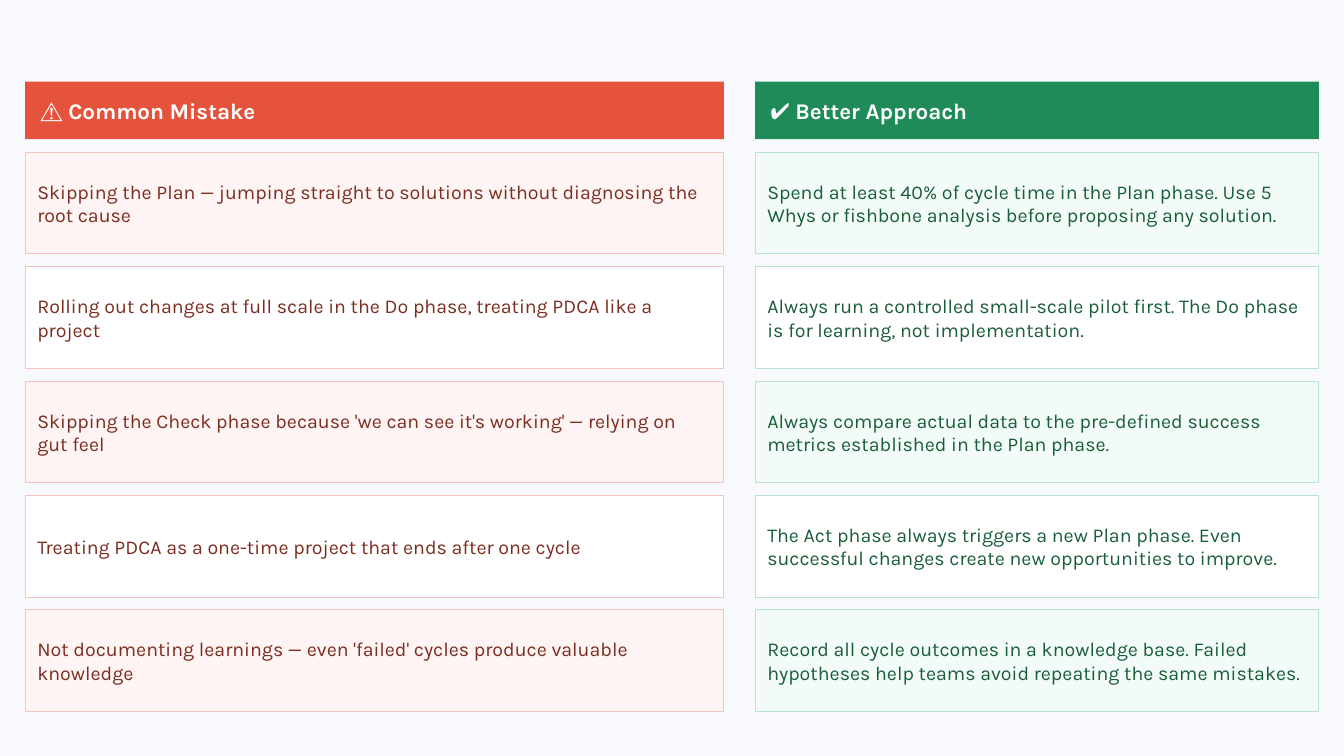
from dataclasses import dataclass

from pptx import Presentation
from pptx.dml.color import RGBColor
from pptx.enum.shapes import MSO_SHAPE
from pptx.enum.text import MSO_ANCHOR, PP_ALIGN
from pptx.util import Inches, Pt

RECTANGLE = MSO_SHAPE.RECTANGLE
MIDDLE = MSO_ANCHOR.MIDDLE
LEFT = PP_ALIGN.LEFT

BACKGROUND = RGBColor(0xF7, 0xF9, 0xFC)
WHITE = RGBColor(0xFF, 0xFF, 0xFF)
RED = RGBColor(0xE5, 0x53, 0x3D)
RED_TINT = RGBColor(0xFD, 0xF4, 0xF3)
RED_BORDER = RGBColor(0xF5, 0xC4, 0xBD)
RED_TEXT = RGBColor(0x7B, 0x2D, 0x20)
GREEN = RGBColor(0x1E, 0x8B, 0x58)
GREEN_TINT = RGBColor(0xF2, 0xFB, 0xF7)
GREEN_BORDER = RGBColor(0xB5, 0xE5, 0xCC)
GREEN_TEXT = RGBColor(0x1A, 0x5E, 0x38)

HEADER_TOP, HEADER_HEIGHT = 0.81, 0.57
FIRST_CARD_TOP, LAST_CARD_TOP, CARD_HEIGHT = 1.51, 6.05, 1.01


@dataclass
class Column:
    left: float
    width: float
    heading: str
    accent: RGBColor
    tint: RGBColor
    border: RGBColor
    text_color: RGBColor
    entries: list


MISTAKES = Column(0.25, 6.93, "⚠ Common Mistake", RED, RED_TINT, RED_BORDER, RED_TEXT, [
    "Skipping the Plan — jumping straight to solutions without diagnosing the root cause",
    "Rolling out changes at full scale in the Do phase, treating PDCA like a project",
    "Skipping the Check phase because 'we can see it's working' — relying on gut feel",
    "Treating PDCA as a one-time project that ends after one cycle",
    "Not documenting learnings — even 'failed' cycles produce valuable knowledge",
])
APPROACHES = Column(7.49, 5.59, "✔ Better Approach", GREEN, GREEN_TINT, GREEN_BORDER, GREEN_TEXT, [
    "Spend at least 40% of cycle time in the Plan phase. "
    "Use 5 Whys or fishbone analysis before proposing any solution.",
    "Always run a controlled small-scale pilot first. "
    "The Do phase is for learning, not implementation.",
    "Always compare actual data to the pre-defined success metrics "
    "established in the Plan phase.",
    "The Act phase always triggers a new Plan phase. "
    "Even successful changes create new opportunities to improve.",
    "Record all cycle outcomes in a knowledge base. "
    "Failed hypotheses help teams avoid repeating the same mistakes.",
])


class ComparisonPage:
    font_name = "Karla"
    heading_size = Pt(16)
    body_size = Pt(14)
    border_width = Pt(0.72)

    def __init__(self, deck):
        blank_layout = deck.slide_layouts[6]
        self.page = deck.slides.add_slide(blank_layout)
        self.page.background.fill.solid()
        self.page.background.fill.fore_color.rgb = BACKGROUND

    def add_box(self, left, top, width, height, fill, border=None):
        box = self.page.shapes.add_shape(
            RECTANGLE, Inches(left), Inches(top), Inches(width), Inches(height))
        box.shadow.inherit = False
        box.fill.solid()
        box.fill.fore_color.rgb = fill
        if border is None:
            box.line.fill.background()
        else:
            box.line.color.rgb = border
            box.line.width = self.border_width
        return box

    def add_text(self, box, text, size, color, side_inset, end_inset, bold=False):
        """Put one left-aligned, vertically centred paragraph in the box."""
        frame = box.text_frame
        frame.word_wrap = True
        frame.vertical_anchor = MIDDLE
        frame.margin_left = frame.margin_right = Inches(side_inset)
        frame.margin_top = frame.margin_bottom = Inches(end_inset)
        para = frame.paragraphs[0]
        para.alignment = LEFT
        span = para.add_run()
        span.text = text
        span.font.name = self.font_name
        span.font.size = size
        span.font.bold = bold
        span.font.color.rgb = color

    def add_header(self, column):
        box = self.add_box(column.left, HEADER_TOP, column.width, HEADER_HEIGHT, column.accent)
        self.add_text(box, column.heading, self.heading_size, WHITE, 0.15, 0, bold=True)

    def add_card(self, column, top, text, fill):
        box = self.add_box(column.left, top, column.width, CARD_HEIGHT, fill, column.border)
        self.add_text(box, text, self.body_size, column.text_color, 0.12, 0.1)

    def add_column(self, column):
        """Add the header and its evenly spaced cards, tinting every other one."""
        self.add_header(column)
        pitch = (LAST_CARD_TOP - FIRST_CARD_TOP) / (len(column.entries) - 1)
        for index, entry in enumerate(column.entries):
            fill = WHITE if index % 2 else column.tint
            self.add_card(column, FIRST_CARD_TOP + index * pitch, entry, fill)


def main():
    deck = Presentation()
    deck.slide_width = Inches(13.33)
    deck.slide_height = Inches(7.5)
    comparison = ComparisonPage(deck)
    for column in (MISTAKES, APPROACHES):
        comparison.add_column(column)
    deck.save("out.pptx")


if __name__ == "__main__":
    main()
